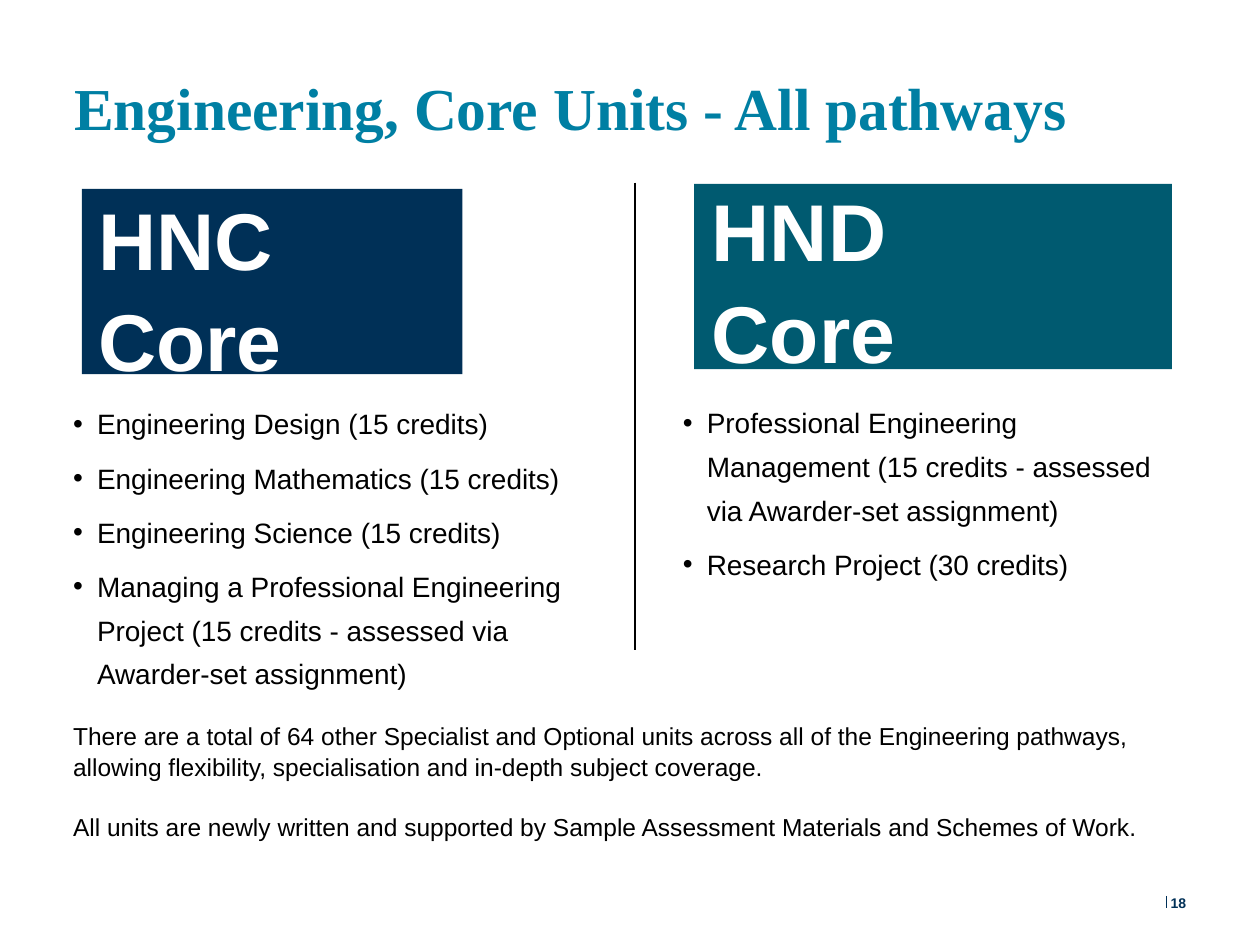
from lxml.etree import SubElement
from pptx import Presentation
from pptx.dml.color import RGBColor
from pptx.enum.shapes import MSO_CONNECTOR, MSO_SHAPE
from pptx.enum.text import MSO_ANCHOR
from pptx.oxml.ns import qn
from pptx.util import Pt

NAVY = RGBColor(0x00, 0x30, 0x57)
TEAL = RGBColor(0x00, 0x5A, 0x70)
BLUE = RGBColor(0x00, 0x7F, 0xA3)
BLACK = RGBColor(0, 0, 0)
WHITE = RGBColor(255, 255, 255)

TITLE = "Engineering, Core Units - All pathways"
# Boxes are left, top, width, height in points
COLUMNS = [
    {
        "panel": (46.8, 108, 217.44, 105.84), "fill": NAVY,
        "head": (56.16, 105.84, 112.32, 111.6), "name": ["HNC", "Core"],
        "list": (41.76, 226.8, 287.28, 139.68),
        "units": [
            "Engineering Design (15 credits)",
            "Engineering Mathematics (15 credits)",
            "Engineering Science (15 credits)",
            "Managing a Professional Engineering Project "
            "(15 credits - assessed via Awarder-set assignment)",
        ],
    },
    {
        "panel": (396.72, 105.12, 272.88, 105.84), "fill": TEAL,
        "head": (406.8, 100.8, 160.56, 111.6), "name": ["HND", "Core"],
        "list": (390.24, 226.08, 273.6, 87.12),
        "units": [
            "Professional Engineering Management "
            "(15 credits - assessed via Awarder-set assignment)",
            "Research Project (30 credits)",
        ],
    },
]
NOTES = [
    "There are a total of 64 other Specialist and Optional units across all of "
    "the Engineering pathways, allowing flexibility, specialisation and "
    "in-depth subject coverage.",
    "All units are newly written and supported by Sample Assessment Materials "
    "and Schemes of Work.",
]
RULES = [((362.88, 104.4), (362.88, 371.52), BLACK),
         ((666.72, 511.92), (666.72, 519.12), NAVY)]


def points(nums):
    return [Pt(n) for n in nums]


def bullet(para):
    props = para._p.get_or_add_pPr()
    props.set("marL", str(Pt(13.68)))
    props.set("indent", str(-Pt(13.68)))
    color = SubElement(props, qn("a:buClr"))
    SubElement(color, qn("a:srgbClr"), val=str(BLACK))
    SubElement(props, qn("a:buFont"), typeface="Arial")
    SubElement(props, qn("a:buChar"), char="•")


def write(shape, lines, size, color, bold=False, face="Arial",
          spacing=1.05, gap=0, dots=False, anchor=MSO_ANCHOR.TOP):
    """Fill a shape with paragraphs that share one style."""
    frame = shape.text_frame
    frame.word_wrap = True
    frame.vertical_anchor = anchor
    frame.margin_left = frame.margin_right = 0
    frame.margin_top = frame.margin_bottom = 0
    for i, line in enumerate(lines):
        para = frame.add_paragraph() if i else frame.paragraphs[0]
        para.text = line
        if dots:
            bullet(para)
        para.line_spacing = spacing
        para.space_before = Pt(gap if i else 0)
        font = para.font
        font.name, font.size, font.bold = face, Pt(size), bold
        font.color.rgb = color


deck = Presentation()
deck.slide_width, deck.slide_height = Pt(720), Pt(540)
slide = deck.slides.add_slide(deck.slide_layouts[5])
shapes = slide.shapes


def add_text(box, lines, size, color, **style):
    write(shapes.add_textbox(*points(box)), lines, size, color, **style)


title = shapes.title
title.left, title.top, title.width, title.height = points(
    (42.48, 33.12, 605.52, 87.84))
write(title, [TITLE], 34, BLUE, bold=True, face="Times New Roman", spacing=1.18)
title.text_frame.paragraphs[0].alignment = 1

for col in COLUMNS:
    panel = shapes.add_shape(MSO_SHAPE.RECTANGLE, *points(col["panel"]))
    panel.shadow.inherit = False
    panel.fill.solid()
    panel.fill.fore_color.rgb = col["fill"]
    panel.line.fill.background()
    add_text(col["head"], col["name"], 46, WHITE, bold=True)
    add_text(col["list"], col["units"], 16, BLACK, spacing=1.3, gap=6, dots=True)

for start, end, color in RULES:
    rule = shapes.add_connector(MSO_CONNECTOR.STRAIGHT, *points(start + end))
    rule.line.color.rgb = color
    rule.line.width = Pt(0.75)
    SubElement(rule._element.spPr, qn("a:effectLst"))

add_text((41.76, 411.12, 627.84, 67.68), NOTES, 14, BLACK, gap=16.8)
add_text((668.88, 511.2, 33.84, 10.08), ["18"], 8, NAVY, bold=True,
         spacing=1, anchor=MSO_ANCHOR.MIDDLE)

deck.save("out.pptx")
